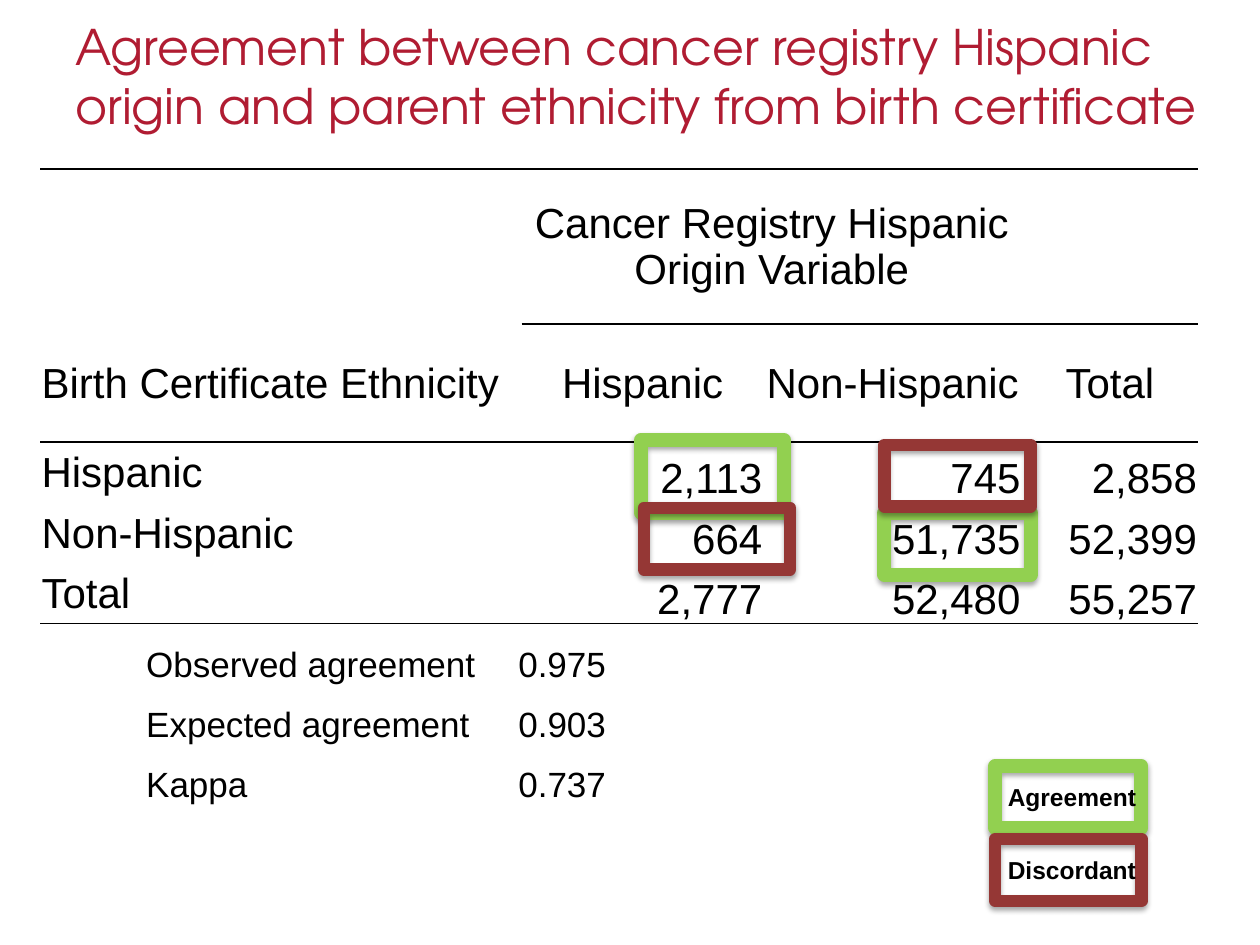
"""Build the slide on agreement between registry and birth certificate ethnicity."""
from dataclasses import dataclass

import pptx
import pptx.dml.color
import pptx.enum.shapes
import pptx.enum.text
import pptx.oxml
import pptx.oxml.ns
import pptx.util
from pptx.util import Inches

ALIGN = pptx.enum.text.PP_ALIGN
ANCHOR = pptx.enum.text.MSO_ANCHOR


@dataclass(frozen=True)
class Theme:
    title_font: str = "TeX Gyre Adventor"
    body_font: str = "Arial"
    title: str = "B01C32"
    ink: str = "000000"
    agree: str = "92D050"
    discord: str = "953735"
    title_size: int = 28
    table_size: int = 24
    stat_size: int = 20
    key_size: int = 14


THEME = Theme()


def rgb(color):
    """Turn a hex string into a colour."""
    return pptx.dml.color.RGBColor.from_string(color)


def xml(parent, markup):
    """Append DrawingML markup to a parent element."""
    tag, rest = markup.split(" ", 1)
    parent.append(pptx.oxml.parse_xml(f"{tag} {pptx.oxml.ns.nsdecls('a')} {rest}"))


def write(tf, text, size, color=THEME.ink, font=THEME.body_font, bold=False, align=ALIGN.LEFT):
    """Set the text of a frame and format it."""
    tf.text = text
    p = tf.paragraphs[0]
    p.alignment = align
    for r in p.runs:
        r.font.name, r.font.size, r.font.bold = font, pptx.util.Pt(size), bold
        r.font.color.rgb = rgb(color)


def add_text(shapes, box, text, size, wrap=False, **style):
    """Add a text box."""
    tf = shapes.add_textbox(*map(Inches, box)).text_frame
    tf.word_wrap = wrap
    write(tf, text, size, **style)


def format_cell(cell, text, size, align, anchor, ruled=""):
    """Fill a cell and rule the sides named in ruled."""
    cell.margin_left = cell.margin_right = cell.margin_top = Inches(0.01)
    cell.margin_bottom = 0
    cell.vertical_anchor = anchor
    write(cell.text_frame, text, size, align=align)
    tcPr = cell._tc.get_or_add_tcPr()
    for side in "LRTB":
        fill = "<a:noFill/>"
        if side in ruled:
            fill = f'<a:solidFill><a:srgbClr val="{THEME.ink}"/></a:solidFill>'
        xml(tcPr, f'<a:ln{side} w="12700">{fill}</a:ln{side}>')
    cell.fill.background()


def add_table(s, left, top, widths, heights):
    """Add a plain table with the given column widths and row heights."""
    box = map(Inches, (left, top, sum(widths), sum(heights)))
    table = s.shapes.add_table(len(heights), len(widths), *box).table
    table.first_row = table.horz_banding = False
    for col, width in zip(table.columns, widths):
        col.width = Inches(width)
    for row, height in zip(table.rows, heights):
        row.height = Inches(height)
    return table


def add_crosstab(s):
    """Add the table of birth certificate against registry ethnicity."""
    rows = [
        ("", "Cancer Registry Hispanic Origin Variable", "", ""),
        ("Birth Certificate Ethnicity", "Hispanic", "Non-Hispanic", "Total"),
        ("Hispanic", "2,113", "745", "2,858"),
        ("Non-Hispanic", "664", "51,735", "52,399"),
        ("Total", "2,777", "52,480", "55,257"),
    ]
    table = add_table(s, 0.32, 1.34, [3.82, 1.92, 2.05, 1.4], [1.23, 0.94, 0.48, 0.48, 0.48])
    for i, row in enumerate(rows):
        for j, text in enumerate(row):
            head = i < 2
            align = ALIGN.LEFT if j == 0 else ALIGN.CENTER if head else ALIGN.RIGHT
            anchor = ANCHOR.MIDDLE if head or j == 0 else ANCHOR.BOTTOM
            ruled = "T" if i == 0 or (i == 1 and j) else ""
            ruled += "B" if i in (1, 4) or (i == 0 and j) else ""
            ruled += "T" if i == 2 else ""
            format_cell(table.cell(i, j), text, THEME.table_size, align, anchor, ruled)
    table.cell(0, 1).merge(table.cell(0, 2))


def add_statistic(s, top, name, value, width):
    """Add a one-row table with a statistic and its value."""
    table = add_table(s, 1.15, top, [width, 3.67 - width], [0.34])
    for j, (text, align) in enumerate([(name, ALIGN.LEFT), (value, ALIGN.RIGHT)]):
        format_cell(table.cell(0, j), text, THEME.stat_size, align, ANCHOR.BOTTOM)


def add_frame(shapes, box, color, weight):
    """Add an unfilled rectangle with a thick line and soft shadow."""
    sp = shapes.add_shape(pptx.enum.shapes.MSO_SHAPE.RECTANGLE, *map(Inches, box))
    sp.shadow.inherit = False
    sp.fill.background()
    sp.line.color.rgb = rgb(color)
    sp.line.width = pptx.util.Pt(weight)
    effects = sp._element.spPr.find(pptx.oxml.ns.qn("a:effectLst"))
    xml(effects, '<a:outerShdw blurRad="39370" dist="22860" dir="5400000" rotWithShape="0">'
        '<a:srgbClr val="000000"><a:alpha val="35000"/></a:srgbClr></a:outerShdw>')


def add_marks(s, boxes, color, weight, label, key_top):
    """Group the frames around cells with their labelled key."""
    shapes = s.shapes.add_group_shape().shapes
    for box in boxes + [(7.9, key_top, 1.16, 0.49)]:
        add_frame(shapes, box, color, weight)
    add_text(shapes, (7.9, key_top + 0.08, 1.23, 0.34), label, THEME.key_size, bold=True)


def main():
    """Build and save the slide."""
    prs = pptx.Presentation()
    prs.slide_width, prs.slide_height = Inches(10), Inches(7.5)
    s = prs.slides.add_slide(prs.slide_layouts[6])
    add_crosstab(s)
    add_text(s.shapes, (0.5, 0.08, 9.18, 1.45),
             "Agreement between cancer registry Hispanic origin and parent ethnicity "
             "from birth certificate",
             THEME.title_size, wrap=True, color=THEME.title, font=THEME.title_font)
    add_statistic(s, 5.09, "Observed agreement", "0.975", 2.72)
    add_statistic(s, 5.57, "Expected agreement", "0.903", 2.81)
    add_statistic(s, 6.04, "Kappa", "0.737", 1.72)
    add_marks(s, [(5.09, 3.49, 1.13, 0.58), (7.02, 4.07, 1.16, 0.49)],
              THEME.agree, 8, "Agreement", 6.08)
    add_marks(s, [(5.11, 4.03, 1.16, 0.49), (7.02, 3.53, 1.16, 0.49)],
              THEME.discord, 7, "Discordant", 6.66)
    prs.save("out.pptx")


if __name__ == "__main__":
    main()
